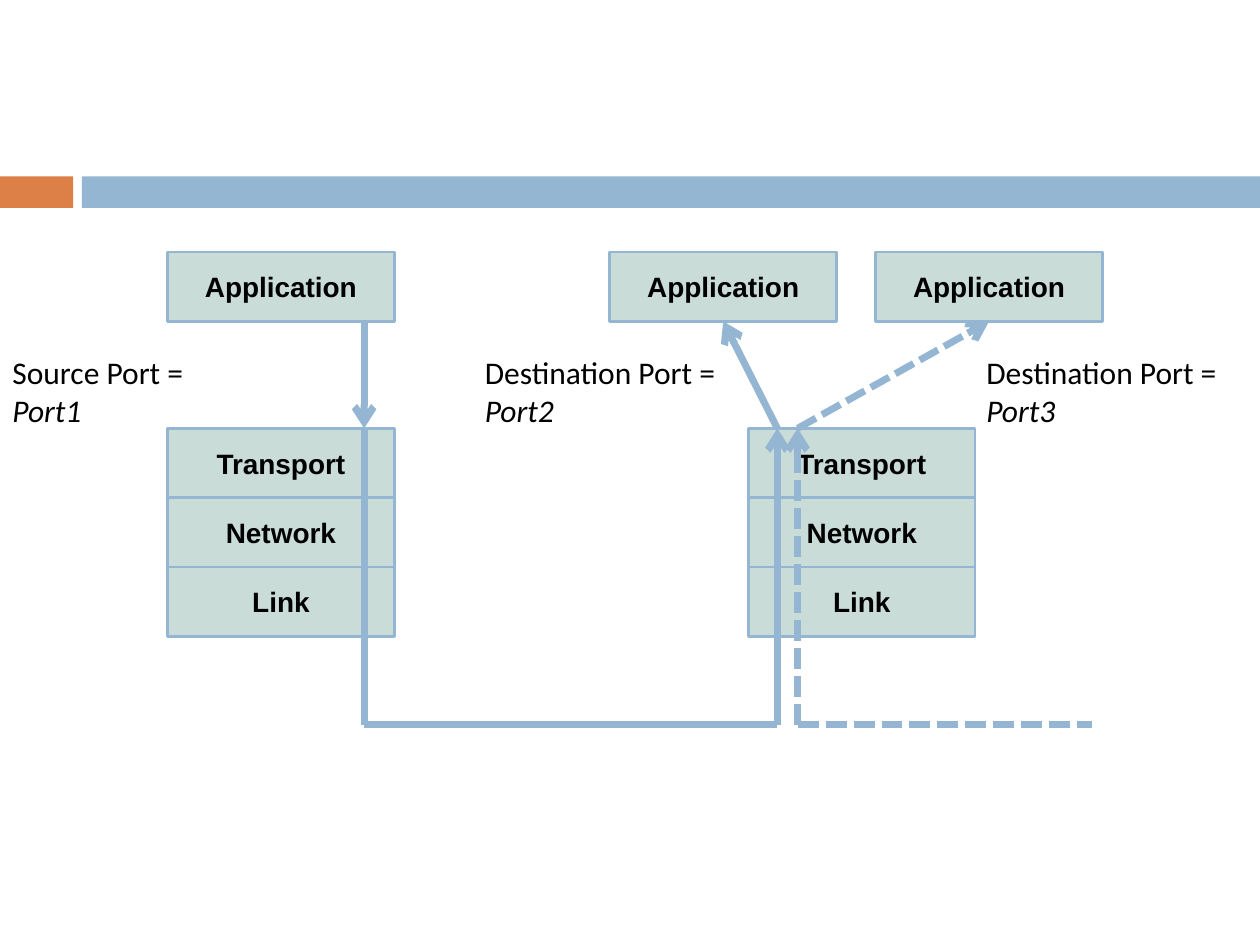
from pptx import Presentation
from pptx.dml.color import RGBColor
from pptx.enum.dml import MSO_LINE
from pptx.enum.shapes import MSO_CONNECTOR, MSO_SHAPE
from pptx.enum.text import MSO_ANCHOR, MSO_AUTO_SIZE, PP_ALIGN
from pptx.oxml.ns import qn
from pptx.util import Inches, Pt
from lxml.etree import SubElement

ORANGE = RGBColor(0xDD, 0x80, 0x47)
BLUE = RGBColor(0x94, 0xB6, 0xD2)
GREEN = RGBColor(0xCA, 0xDC, 0xD8)
BLACK = RGBColor(0, 0, 0)

BANDS = [(0, 0.58, ORANGE), (0.65, 9.35, BLUE)]  # left, width, colour
LAYERS = ["Transport", "Network", "Link"]
STACK_LEFTS = [1.33, 5.94]
APPLICATION_LEFTS = [1.33, 4.84, 6.95]
PORT_LABELS = [  # left, width, caption, port
    (0, 1.88, "Source Port = ", "Port1"),
    (3.75, 2.27, "Destination Port = ", "Port2"),
    (7.73, 2.27, "Destination Port = ", "Port3"),
]

BOX_WIDTH, BOX_HEIGHT = 1.8, 0.55
APPLICATION_TOP, STACK_TOP, WIRE_Y = 2, 3.4, 5.75
APPLICATION_BOTTOM = APPLICATION_TOP + BOX_HEIGHT
SENDER_X, RECEIVER_X, OTHER_X, OTHER_END_X = 2.89, 6.17, 6.33, 8.67


def add_rectangle(page, left, top, width, height, fill):
    box = page.shapes.add_shape(MSO_SHAPE.RECTANGLE, Inches(left), Inches(top),
                                Inches(width), Inches(height))
    box.shadow.inherit = False
    box.fill.solid()
    box.fill.fore_color.rgb = fill
    box.line.fill.background()
    return box


def add_run(para, text, font, size, bold=False, italic=False):
    run = para.add_run()
    run.text = text
    run.font.name = font
    run.font.size = Pt(size)
    run.font.bold = bold
    run.font.italic = italic
    run.font.color.rgb = BLACK


def add_layer_box(page, left, top, name):
    box = add_rectangle(page, left, top, BOX_WIDTH, BOX_HEIGHT, GREEN)
    box.line.color.rgb = BLUE
    box.line.width = Pt(1.5)
    box.text_frame.vertical_anchor = MSO_ANCHOR.MIDDLE
    para = box.text_frame.paragraphs[0]
    para.alignment = PP_ALIGN.CENTER
    add_run(para, name, "Arial", 16, bold=True)
    return box


def add_wire(page, start, end, arrow=False, dashed=False, target=None):
    """Draw a data path; a target box is joined at its bottom middle."""
    wire = page.shapes.add_connector(MSO_CONNECTOR.STRAIGHT,
                                     *(Inches(value) for value in start + end))
    wire.line.color.rgb = BLUE
    wire.line.width = Pt(4)
    if dashed:
        wire.line.dash_style = MSO_LINE.SQUARE_DOT
        wire.line._ln.find(qn("a:prstDash")).set("val", "sysDash")
    if arrow:
        SubElement(wire.line._ln, qn("a:tailEnd"), type="arrow")
    SubElement(wire._element.spPr, qn("a:effectLst"))
    if target is not None:
        wire.end_connect(target, 2)


def add_port_label(page, left, width, caption, port):
    box = page.shapes.add_textbox(Inches(left), Inches(2.75),
                                  Inches(width), Inches(0.71))
    box.text_frame.word_wrap = True
    box.text_frame.auto_size = MSO_AUTO_SIZE.SHAPE_TO_FIT_TEXT
    para = box.text_frame.paragraphs[0]
    add_run(para, caption, "Calibri", 18)
    add_run(para, port, "Calibri", 18, italic=True)


def main():
    deck = Presentation()
    deck.slide_width, deck.slide_height = Inches(10), Inches(7.5)
    page = deck.slides.add_slide(deck.slide_layouts[6])

    for left, width, colour in BANDS:
        add_rectangle(page, left, 1.4, width, 0.25, colour)
    for left in STACK_LEFTS:
        for row, name in enumerate(LAYERS):
            add_layer_box(page, left, STACK_TOP + row * BOX_HEIGHT, name)
    _, receiver, other = [add_layer_box(page, left, APPLICATION_TOP, "Application")
                          for left in APPLICATION_LEFTS]

    add_wire(page, (SENDER_X, APPLICATION_BOTTOM), (SENDER_X, STACK_TOP), arrow=True)
    add_wire(page, (SENDER_X, STACK_TOP), (SENDER_X, WIRE_Y))
    add_wire(page, (SENDER_X, WIRE_Y), (RECEIVER_X, WIRE_Y))
    add_wire(page, (OTHER_X, WIRE_Y), (OTHER_END_X, WIRE_Y), dashed=True)
    for x, target, dashed in [(RECEIVER_X, receiver, False), (OTHER_X, other, True)]:
        add_wire(page, (x, WIRE_Y), (x, STACK_TOP), arrow=True, dashed=dashed)
        add_wire(page, (x, STACK_TOP), (x, APPLICATION_BOTTOM),
                 arrow=True, dashed=dashed, target=target)

    for label in PORT_LABELS:
        add_port_label(page, *label)

    deck.save("out.pptx")


if __name__ == "__main__":
    main()
